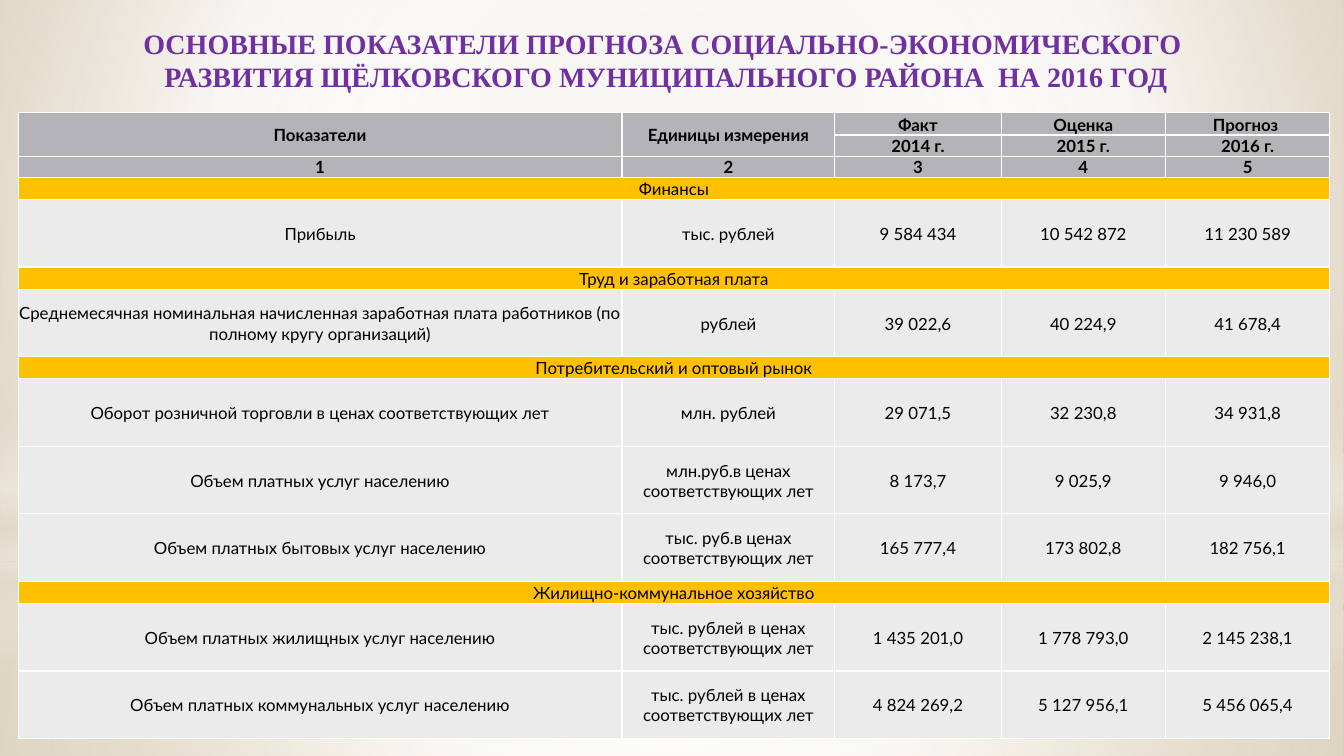
from lxml import etree
from pptx import Presentation
from pptx import util as u
from pptx.dml.color import RGBColor
from pptx.enum import shapes, text
from pptx.oxml.ns import qn

TITLE = ("ОСНОВНЫЕ ПОКАЗАТЕЛИ ПРОГНОЗА СОЦИАЛЬНО-ЭКОНОМИЧЕСКОГО  "
         "РАЗВИТИЯ ЩЁЛКОВСКОГО МУНИЦИПАЛЬНОГО РАЙОНА  НА 2016 ГОД")
HEAD = [
    ("Показатели", "Единицы измерения", "Факт", "Оценка", "Прогноз "),
    ("", "", "2014 г.", "2015 г.", "2016 г."),
    ("1", "2", "3", "4", "5"),
]
# A row with a single entry is a section band across the table.
BODY = [
    ("Финансы",),
    ("Прибыль", "тыс. рублей", "9 584 434", "10 542 872", "11 230 589"),
    ("Труд и заработная плата",),
    ("Среднемесячная номинальная начисленная заработная плата работников "
     "(по полному кругу организаций)", "рублей", "39 022,6", "40 224,9", "41 678,4"),
    ("Потребительский и оптовый рынок",),
    ("Оборот розничной торговли в ценах соответствующих лет", "млн. рублей",
     "29 071,5", "32 230,8", "34 931,8"),
    ("Объем платных услуг населению", "млн.руб.в ценах соответствующих лет",
     "8 173,7", "9 025,9", "9 946,0"),
    ("Объем платных бытовых услуг населению", "тыс. руб.в ценах соответствующих лет",
     "165 777,4", "173 802,8", "182 756,1"),
    ("Жилищно-коммунальное хозяйство",),
    ("Объем платных жилищных услуг населению", "тыс. рублей в ценах соответствующих лет",
     "1 435 201,0", "1 778 793,0", "2 145 238,1"),
    ("Объем платных коммунальных услуг населению",
     "тыс. рублей в ценах соответствующих лет",
     "4 824 269,2", "5 127 956,1", "5 456 065,4"),
]
COLS = [599, 211, 165, 163, 163]
HEAD_H, BAND_H, DATA_H = [22, 21, 21], 22, 67
GRAY, GOLD, PALE, WHITE = "B4B4B8", "FFC000", "EBEBEB", "FFFFFF"

# Gradient stops are (position, colour, opacity), all in percent.
MID = (50, 50, 50, 50)
BACK = [(0, "DFD5C1", 100), (60, WHITE, 100), (100, "CCB791", 100)]
RECT, OVAL = shapes.MSO_SHAPE.RECTANGLE, shapes.MSO_SHAPE.OVAL
GLOWS = [
    (RECT, (0, 558, 1333, 192), MID,
     [(0, WHITE, 91), (37, WHITE, 76), (100, "E3DCCF", 79)]),
    (RECT, (0, 0, 1333, 558), MID,
     [(0, WHITE, 89), (48, WHITE, 62), (100, "E3DCCF", 79)]),
    (RECT, (0, 412, 1333, 250), None,
     [(0, WHITE, 0), (29, WHITE, 30), (45, "E3DCCF", 40),
      (55, WHITE, 26), (65, "E3DCCF", 60), (100, WHITE, 0)]),
    (OVAL, (0, 175, 1333, 558), MID, [(0, WHITE, 100), (56, WHITE, 0)]),
]


def px(n):
    return u.Emu(n * 9144)


def rgb(tone):
    return RGBColor.from_string(tone)


def add(node, tag, **attrs):
    return etree.SubElement(node, qn(tag), {k: str(v) for k, v in attrs.items()})


def shade(fill, node, stops, focus):
    """Give node a gradient: round about focus, or top to bottom if None."""
    fill.solid()
    old = next(node.iter(qn("a:solidFill")))
    grad = etree.Element(qn("a:gradFill"), rotWithShape="1")
    row = add(grad, "a:gsLst")
    for pos, tone, alpha in stops:
        clr = add(add(row, "a:gs", pos=pos * 1000), "a:srgbClr", val=tone)
        add(clr, "a:alpha", val=alpha * 1000)
    if focus:
        way = add(grad, "a:path", path="circle")
        add(way, "a:fillToRect", **{k: v * 1000 for k, v in zip("ltrb", focus)})
    else:
        add(grad, "a:lin", ang=90 * 60000, scaled=0)
    old.getparent().replace(old, grad)


def write(frame, words, size=12, font="Lato", tone="000000", bold=False):
    para = frame.paragraphs[0]
    para.alignment = text.PP_ALIGN.CENTER
    run = para.add_run()
    run.text = words
    face = run.font
    face.size, face.name, face.bold = u.Pt(size), font, bold
    face.color.rgb = rgb(tone)


def edge(cell):
    """Draw thin white borders; they must precede the cell's fill."""
    props = cell._tc.get_or_add_tcPr()
    for side in ("a:lnL", "a:lnR", "a:lnT", "a:lnB"):
        line = add(props, side, w=u.Pt(1))
        add(add(line, "a:solidFill"), "a:srgbClr", val=WHITE)


def paint(slide):
    shade(slide.background.fill, slide._element, BACK, (20, 10, 20, 60))
    for kind, box, focus, stops in GLOWS:
        glow = slide.shapes.add_shape(kind, *map(px, box))
        glow.shadow.inherit = False
        glow.line.fill.background()
        shade(glow.fill, glow._element, stops, focus)


def head(slide):
    title = slide.shapes.title
    slide.shapes._spTree.append(title._element)
    title.left, title.top, title.width, title.height = map(px, (56, 21, 1209, 77))
    frame = title.text_frame
    frame.word_wrap = True
    frame.auto_size = text.MSO_AUTO_SIZE.SHAPE_TO_FIT_TEXT
    frame.vertical_anchor = text.MSO_ANCHOR.MIDDLE
    write(frame, TITLE, size=20, font="Times New Roman", tone="7030A0", bold=True)


def grid(slide):
    rows = HEAD + BODY
    tall = HEAD_H + [BAND_H if len(row) == 1 else DATA_H for row in BODY]
    box = map(px, (18, 112, sum(COLS), sum(tall)))
    table = slide.shapes.add_table(len(rows), len(COLS), *box).table
    table.first_row = table.horz_banding = False
    for col, wide in zip(table.columns, COLS):
        col.width = px(wide)
    for r, row in enumerate(rows):
        table.rows[r].height = px(tall[r])
        top, band = r < len(HEAD), len(row) == 1
        for c in range(len(COLS)):
            cell = table.cell(r, c)
            edge(cell)
            cell.fill.solid()
            cell.fill.fore_color.rgb = rgb(GRAY if top else GOLD if band else PALE)
            cell.margin_left = cell.margin_right = cell.margin_top = px(1)
            cell.margin_bottom = 0
            cell.vertical_anchor = text.MSO_ANCHOR.MIDDLE
            if c < len(row) and row[c]:
                write(cell.text_frame, row[c], bold=top)
        if band:
            table.cell(r, 0).merge(table.cell(r, len(COLS) - 1))
    for c in (0, 1):
        table.cell(0, c).merge(table.cell(1, c))


def main():
    deck = Presentation()
    deck.slide_width, deck.slide_height = px(1333), px(750)
    slide = deck.slides.add_slide(deck.slide_layouts[5])
    paint(slide)
    head(slide)
    grid(slide)
    deck.save("out.pptx")


if __name__ == "__main__":
    main()
